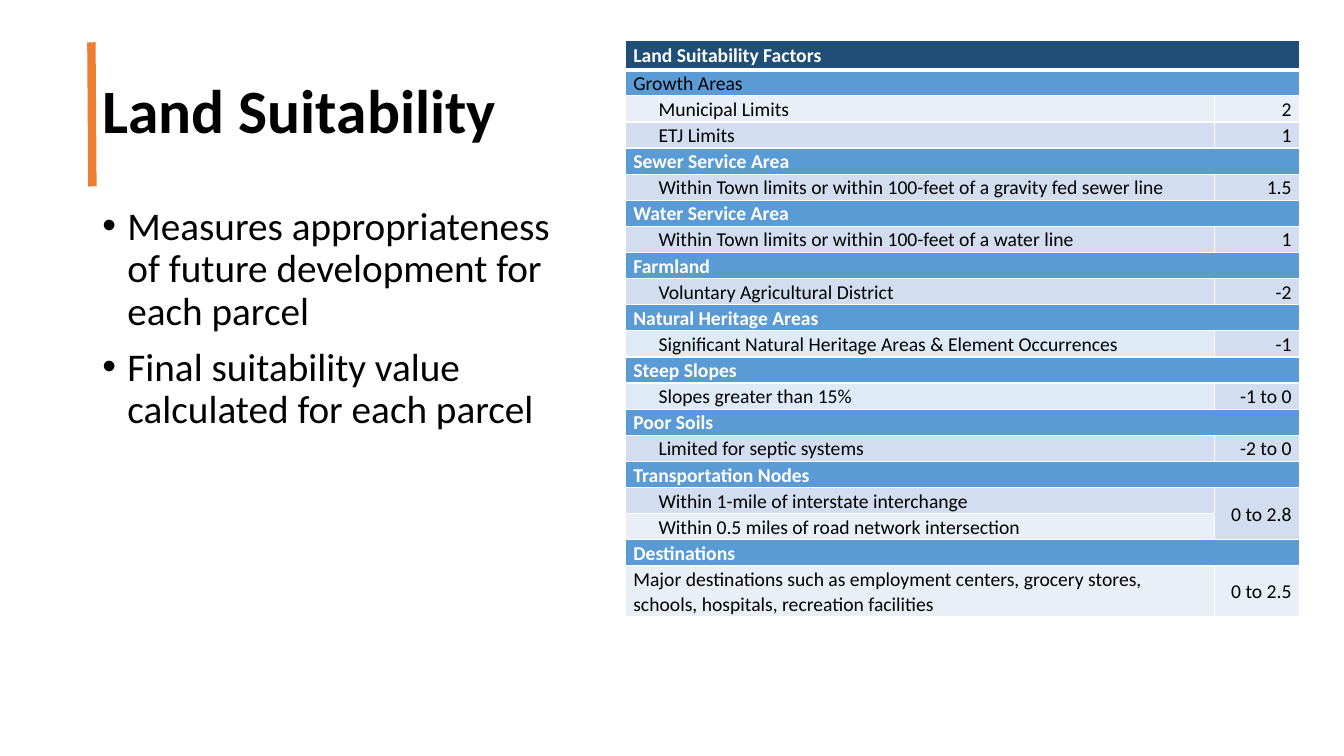
import pptx
import pptx.util
import pptx.dml.color
import pptx.enum.shapes
import pptx.enum.text
import pptx.oxml
from pptx.oxml.ns import qn

Pt = pptx.util.Pt
ALIGN = pptx.enum.text.PP_ALIGN
MIDDLE = pptx.enum.text.MSO_ANCHOR.MIDDLE
FONT = "Calibri"
HUES = {
    "black": "000000", "white": "FFFFFF", "orange": "ED7D31", "navy": "1F4E79",
    "blue": "5B9BD5", "pale": "EAEFF7", "band": "D2DEEF", "ice": "DEEBF7",
}

# Table rows: label, value, label fill, value fill.
# A value of None marks a heading, "" continues the value above.
ROWS = [
    ("Land Suitability Factors", None, "navy", "navy"),
    ("Growth Areas", None, "blue", "blue"),
    ("Municipal Limits", "2", "pale", "pale"),
    ("ETJ Limits", "1", "band", "band"),
    ("Sewer Service Area", None, "blue", "blue"),
    ("Within Town limits or within 100-feet of a gravity fed sewer line", "1.5", "band", "band"),
    ("Water Service Area", None, "blue", "blue"),
    ("Within Town limits or within 100-feet of a water line", "1", "band", "band"),
    ("Farmland", None, "blue", "blue"),
    ("Voluntary Agricultural District", "-2", "band", "band"),
    ("Natural Heritage Areas", None, "blue", "blue"),
    ("Significant Natural Heritage Areas & Element Occurrences", "-1", "ice", "band"),
    ("Steep Slopes", None, "blue", "blue"),
    ("Slopes greater than 15%", "-1 to 0", "ice", "band"),
    ("Poor Soils", None, "blue", "blue"),
    ("Limited for septic systems", "-2 to 0", "band", "band"),
    ("Transportation Nodes", None, "blue", "blue"),
    ("Within 1-mile of interstate interchange", "0 to 2.8", "band", "band"),
    ("Within 0.5 miles of road network intersection", "", "pale", "band"),
    ("Destinations", None, "blue", "blue"),
    ("Major destinations such as employment centers, grocery stores, "
     "schools, hospitals, recreation facilities", "0 to 2.5", "pale", "pale"),
]
POINTS = [
    "Measures appropriateness of future development for each parcel",
    "Final suitability value calculated for each parcel",
]


def rgb(hue):
    return pptx.dml.color.RGBColor.from_string(HUES[hue])


def write(para, text, size=14, hue="black", bold=False, align=ALIGN.LEFT,
          space=1.07, before=0, indent=0, hang=0, bullet=None):
    """Fill one paragraph with formatted text."""
    run = para.add_run()
    run.text = text
    font = run.font
    font.name, font.size, font.bold = FONT, Pt(size), bold
    font.color.rgb = rgb(hue)
    para.alignment, para.line_spacing = align, space
    para.space_before = Pt(before)
    props = para._p.get_or_add_pPr()
    props.set("marL", str(Pt(indent)))
    props.set("indent", str(Pt(-hang)))
    if bullet:
        face = pptx.oxml.parse_xml(
            '<a:buFont xmlns:a="http://schemas.openxmlformats.org/drawingml/2006/main" typeface="Arial"/>')
        props.append(face)
        props.append(props.makeelement(qn("a:buChar"), {"char": bullet}))


def edge(cell, base=1):
    """Draw white borders; base is the width of the lower one."""
    props = cell._tc.get_or_add_tcPr()
    for side, width in (("L", 1), ("R", 1), ("T", 1), ("B", base)):
        line = props.makeelement(qn("a:ln" + side), {"w": str(Pt(width))})
        fill = line.makeelement(qn("a:solidFill"), {})
        fill.append(fill.makeelement(qn("a:srgbClr"), {"val": HUES["white"]}))
        line.append(fill)
        props.append(line)


def head(slide, left, top, width, height):
    # Title
    title = slide.shapes.title
    title.left, title.top, title.width, title.height = map(Pt, (left, top, width, height))
    frame = title.text_frame
    frame.auto_size = pptx.enum.text.MSO_AUTO_SIZE.NONE
    frame.vertical_anchor = MIDDLE
    write(frame.paragraphs[0], "Land Suitability", size=44, bold=True, space=0.9)
    # Accent line
    line = slide.shapes.add_connector(
        pptx.enum.shapes.MSO_CONNECTOR.STRAIGHT,
        Pt(left - 0.7), Pt(top + 1.4), Pt(left), Pt(top + height))
    line.line.color.rgb = rgb("orange")
    line.line.width = Pt(6)
    props = line._element.spPr
    props.append(props.makeelement(qn("a:effectLst"), {}))


def body(slide, left, top, width, height):
    frame = slide.shapes.add_textbox(*map(Pt, (left, top, width, height))).text_frame
    frame.word_wrap = True
    for i, text in enumerate(POINTS):
        para = frame.add_paragraph() if i else frame.paragraphs[0]
        write(para, text, size=28, space=0.9, before=10, indent=18, hang=18, bullet="•")


def grid(slide, left, top, width, height):
    first, last, side = 21, 36, 60.5
    step = (height - first - last) / (len(ROWS) - 2)
    table = slide.shapes.add_table(
        len(ROWS), 2, *map(Pt, (left, top, width, height))).table
    table.first_row = table.horz_banding = False
    table.columns[0].width, table.columns[1].width = Pt(width - side), Pt(side)
    end = len(ROWS) - 1
    for i, (label, value, *fills) in enumerate(ROWS):
        table.rows[i].height = Pt({0: first, end: last}.get(i, step))
        cells = [table.cell(i, 0), table.cell(i, 1)]
        for cell, fill in zip(cells, fills):
            edge(cell, 1 if i else 3)
            cell.fill.solid()
            cell.fill.fore_color.rgb = rgb(fill)
            cell.vertical_anchor = MIDDLE
            cell.margin_left = cell.margin_right = Pt(5.4)
            cell.margin_top = cell.margin_bottom = 0
        name, score = [cell.text_frame.paragraphs[0] for cell in cells]
        if value is None:
            cells[0].merge(cells[1])
            bold = label != "Growth Areas"
            write(name, label, hue="white" if bold else "black", bold=bold)
            continue
        write(name, label, indent=0 if i == end else 18)
        if value:
            write(score, value, align=ALIGN.RIGHT)
        else:
            table.cell(i - 1, 1).merge(cells[1])


def main():
    deck = pptx.Presentation()
    deck.slide_width, deck.slide_height = Pt(960), Pt(540)
    slide = deck.slides.add_slide(deck.slide_layouts[5])
    head(slide, 66, 28.8, 828, 104.4)
    body(slide, 66, 144, 338, 343)
    grid(slide, 447, 28.8, 481, 411.5)
    deck.save("out.pptx")


if __name__ == "__main__":
    main()
